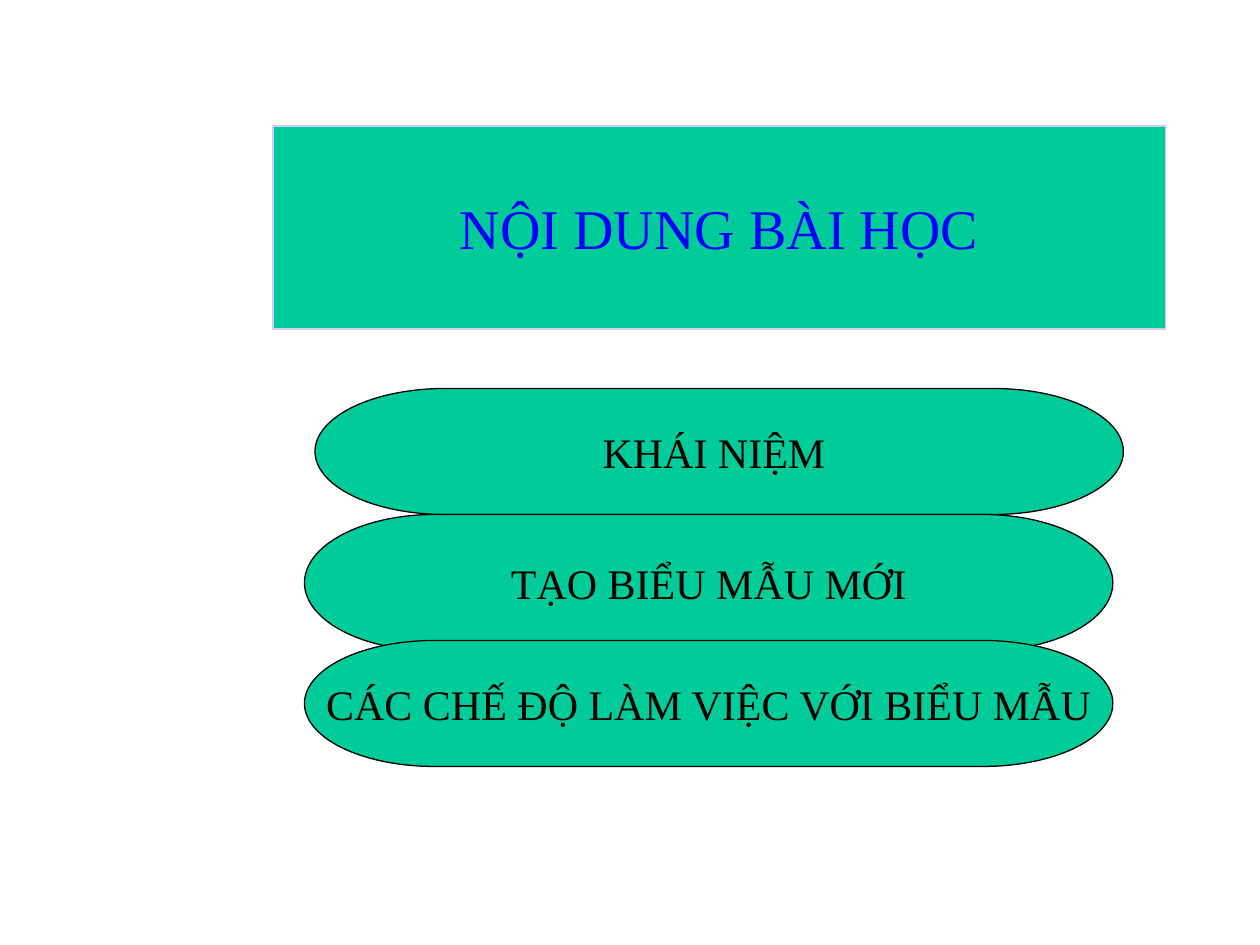
import lxml.etree
import pptx
import pptx.dml.color
import pptx.enum.shapes
import pptx.enum.text
import pptx.oxml.ns
import pptx.util

Pt = pptx.util.Pt
GREEN, BLACK, BLUE, LILAC = "00CC99", "000000", "0000FF", "CCCCFF"
TOPICS = [  # text, left, top, height
    ("KHÁI NIỆM ", 180, 222, 72),
    ("TẠO BIỂU MẪU MỚI", 174, 294, 78),
    ("CÁC CHẾ ĐỘ LÀM VIỆC VỚI BIỂU MẪU", 174, 366, 72),
]
TOPIC_WIDTH = 462


def rgb(value):
    return pptx.dml.color.RGBColor.from_string(value)


def set_attrs(obj, **values):
    for name, value in values.items():
        setattr(obj, name, value)


def style_shape(sp, line):
    sp.fill.solid()
    sp.fill.fore_color.rgb = rgb(GREEN)
    sp.line.color.rgb = rgb(line)
    sp.line.width = Pt(0.75)
    sp.shadow.inherit = False


def write_text(sp, text, size, color, wrap):
    tf = sp.text_frame
    set_attrs(tf, word_wrap=wrap,
              auto_size=pptx.enum.text.MSO_AUTO_SIZE.NONE,
              vertical_anchor=pptx.enum.text.MSO_ANCHOR.MIDDLE)
    p = tf.paragraphs[0]
    p.alignment = pptx.enum.text.PP_ALIGN.CENTER
    r = p.add_run()
    r.text = text
    set_attrs(r.font, name="Times New Roman", size=Pt(size))
    r.font.color.rgb = rgb(color)


def add_banner_title(s, text):
    sp = s.shapes.title
    set_attrs(sp, left=Pt(156), top=Pt(72), width=Pt(510), height=Pt(116))
    # Give the title placeholder its wavy outline
    qn = pptx.oxml.ns.qn
    geom = lxml.etree.SubElement(sp.element.spPr, qn("a:prstGeom"),
                                 prst="flowChartPunchedTape")
    lxml.etree.SubElement(geom, qn("a:avLst"))
    style_shape(sp, LILAC)
    write_text(sp, text, 32, BLUE, True)


def add_topic(s, text, left, top, height):
    sp = s.shapes.add_shape(
        pptx.enum.shapes.MSO_SHAPE.FLOWCHART_TERMINATOR,
        Pt(left), Pt(top), Pt(TOPIC_WIDTH), Pt(height))
    style_shape(sp, BLACK)
    write_text(sp, text, 24, BLACK, False)


def main():
    prs = pptx.Presentation()
    set_attrs(prs, slide_width=Pt(720), slide_height=Pt(540))
    s = prs.slides.add_slide(prs.slide_layouts[5])

    # Banner
    add_banner_title(s, "NỘI DUNG BÀI HỌC")

    # Lesson topics
    for topic in TOPICS:
        add_topic(s, *topic)

    prs.save("out.pptx")


if __name__ == "__main__":
    main()
